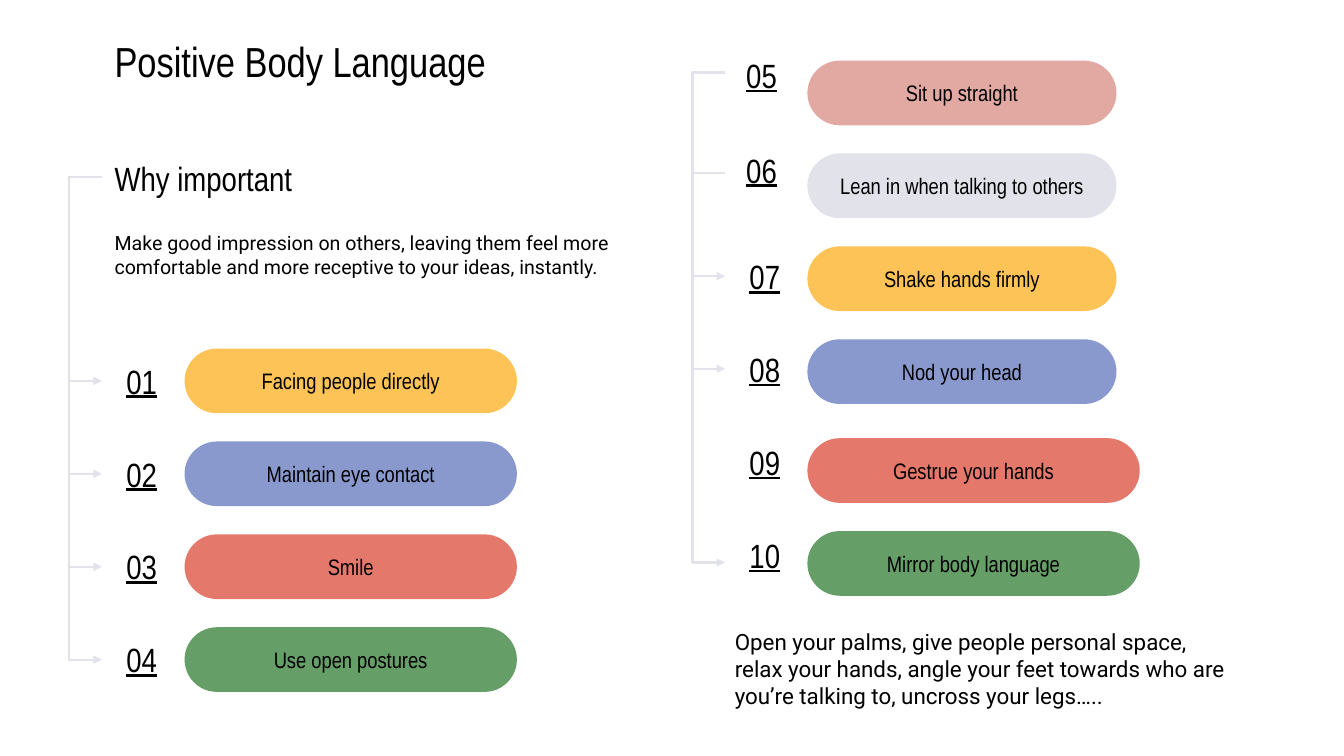
from lxml.etree import SubElement
from pptx import Presentation
from pptx.dml.color import RGBColor
from pptx.enum.shapes import MSO_CONNECTOR as Connector, MSO_SHAPE as Shape
from pptx.enum.text import MSO_ANCHOR as Anchor, PP_ALIGN as Align
from pptx.oxml.ns import qn
from pptx.util import Pt

HEADING_FONT = "Arial Narrow"
BODY_FONT = "Roboto"
BLACK, GRAY = "000000", "E1E2EA"
YELLOW, BLUE, RED, GREEN, PINK = "FEC357", "8999CE", "E4796B", "659E67", "E2A8A2"
PITCH = 66.35
PILL_HEIGHT = 46.2
BRANCH_REACH = 24.5
BRANCH_WIDTH = 0.06


def color(value):
    return RGBColor.from_string(value)


def write_text(shape, text, size, font, align, inset_x, inset_y, underline=False):
    frame = shape.text_frame
    frame.word_wrap = True
    frame.vertical_anchor = Anchor.MIDDLE
    frame.margin_left = frame.margin_right = Pt(inset_x)
    frame.margin_top = frame.margin_bottom = Pt(inset_y)
    paragraph = frame.paragraphs[0]
    paragraph.text = text
    paragraph.alignment = align
    paragraph.font.name = font
    paragraph.font.size = Pt(size)
    paragraph.font.underline = underline
    paragraph.font.color.rgb = color(BLACK)


def add_text(slide, text, left, top, width, height, size, font=HEADING_FONT,
             align=Align.LEFT, inset=9.14, underline=False):
    box = slide.shapes.add_textbox(Pt(left), Pt(top), Pt(width), Pt(height))
    write_text(box, text, size, font, align, inset, inset, underline)


def add_number(slide, number, left, top):
    add_text(slide, f"{number:02}", left, top, 56.9, 41, 24,
             align=Align.CENTER, underline=True)


def add_pill(slide, text, fill, left, top, width):
    pill = slide.shapes.add_shape(Shape.ROUNDED_RECTANGLE, Pt(left), Pt(top),
                                  Pt(width), Pt(PILL_HEIGHT))
    pill.adjustments[0] = 0.5
    pill.shadow.inherit = False
    pill.fill.solid()
    pill.fill.fore_color.rgb = color(fill)
    pill.line.fill.background()
    write_text(pill, text, 16, HEADING_FONT, Align.CENTER, 0, 9.14)


def add_branch(slide, left, start, end):
    branch = slide.shapes.add_connector(Connector.ELBOW, Pt(left), Pt(start),
                                        Pt(left + BRANCH_WIDTH), Pt(end))
    branch.line.color.rgb = color(GRAY)
    branch.line.width = Pt(1.5)
    properties = branch._element.spPr
    bend = round(-BRANCH_REACH / BRANCH_WIDTH * 100000)
    guides = properties.find(qn("a:prstGeom")).get_or_add_avLst()
    SubElement(guides, qn("a:gd"), name="adj1", fmla=f"val {bend}")
    SubElement(properties.find(qn("a:ln")), qn("a:tailEnd"), type="triangle")
    SubElement(properties, qn("a:effectLst"))


def add_left_column(slide):
    left = 72.7
    for row in range(4):
        add_branch(slide, left, 126.7, 272.1 + row * PITCH)
    add_text(slide, "Why important", left, 105.8, 393, 42.5, 24)
    add_text(slide, "Make good impression on others, leaving them feel more "
             "comfortable and more receptive to your ideas, instantly.",
             left, 157, 393, 49.7, 14, BODY_FONT)
    habits = [("Facing people directly", YELLOW), ("Maintain eye contact", BLUE),
              ("Smile", RED), ("Use open postures", GREEN)]
    for row, (habit, fill) in enumerate(habits):
        add_number(slide, row + 1, left, 251.5 + row * PITCH)
        add_pill(slide, habit, fill, 131.8, 249 + row * PITCH, 237.4)


def add_right_column(slide):
    left = 517.8
    for start, end in [(51.8, 197.3), (51.8, 263.5), (123.8, 401.8)]:
        add_branch(slide, left, start, end)
    add_number(slide, 5, 515.5, 33.3)
    add_number(slide, 6, 515.5, 100.8)
    for row in range(4):
        add_number(slide, row + 7, left, 177 + row * PITCH)
    upper = [("Sit up straight", PINK), ("Lean in when talking to others", GRAY),
             ("Shake hands firmly", YELLOW), ("Nod your head", BLUE)]
    lower = [("Gestrue your hands", RED), ("Mirror body language", GREEN)]
    for habits, top, width in [(upper, 43.3, 220.8), (lower, 313, 237.4)]:
        for row, (habit, fill) in enumerate(habits):
            add_pill(slide, habit, fill, 576.7, top + row * PITCH, width)
    add_text(slide, "Open your palms, give people personal space, relax your hands, "
             "angle your feet towards who are you’re talking to, uncross your legs…..",
             left, 458.8, 369.4, 37.4, 16, BODY_FONT, inset=7.2)


def main():
    presentation = Presentation()
    presentation.slide_width = Pt(960)
    presentation.slide_height = Pt(540)
    slide = presentation.slides.add_slide(presentation.slide_layouts[6])
    add_text(slide, "Positive Body Language", 72.7, 23, 808.6, 41, 30)
    add_left_column(slide)
    add_right_column(slide)
    presentation.save("out.pptx")


if __name__ == "__main__":
    main()
